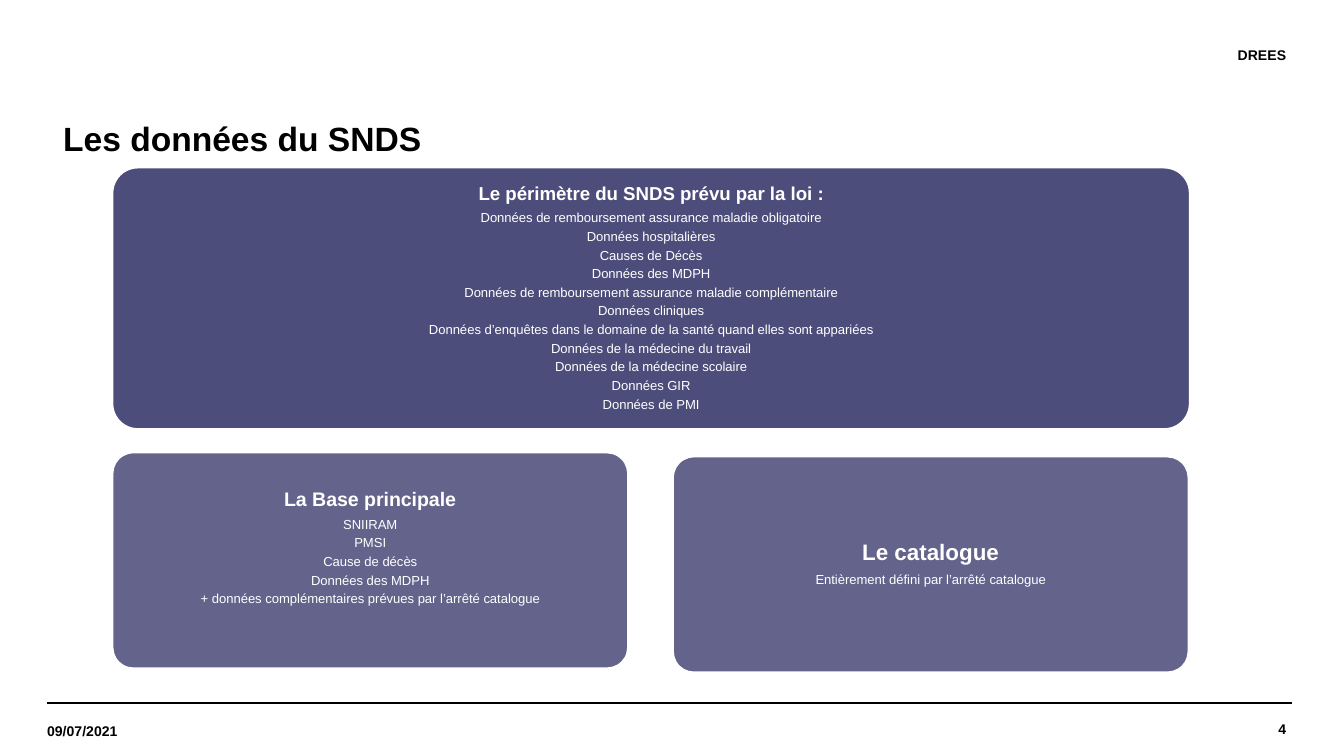
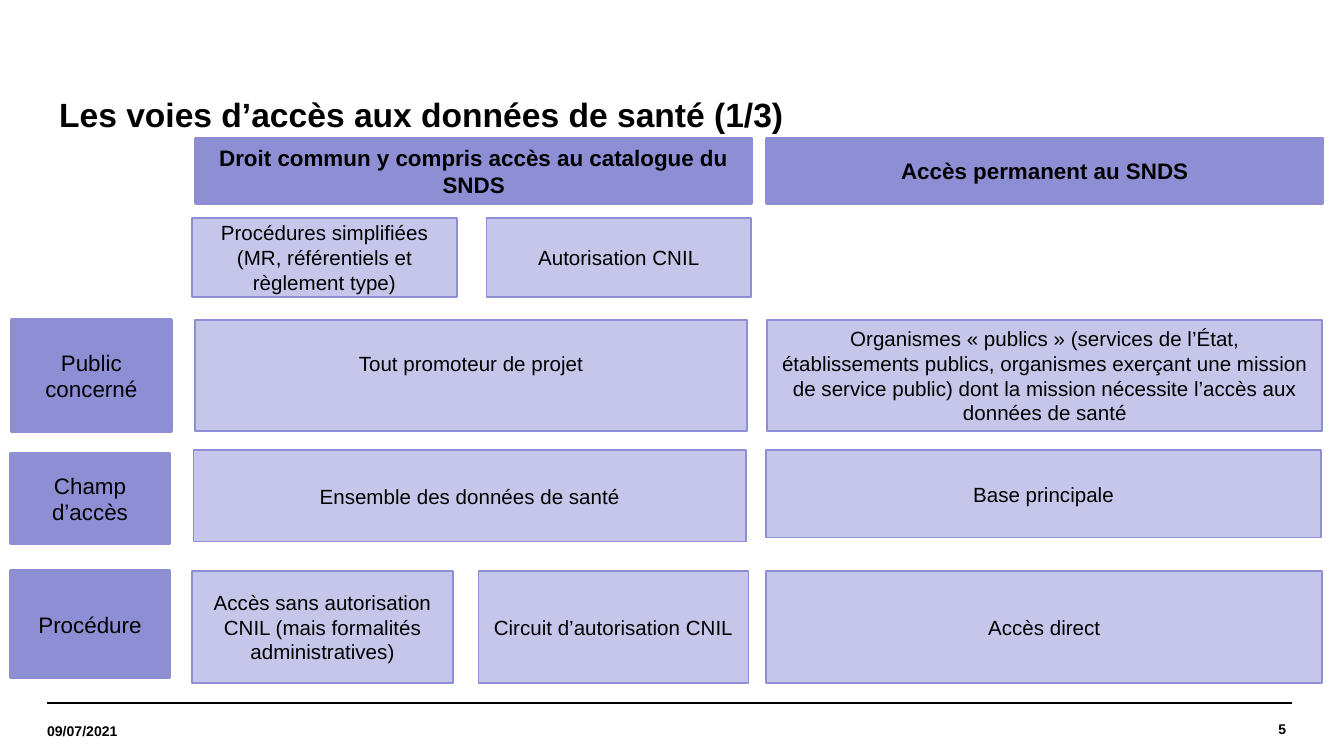
from dataclasses import dataclass

from lxml.etree import SubElement
from pptx import Presentation
from pptx.dml.color import RGBColor as Rgb
from pptx.enum.shapes import MSO_CONNECTOR as Link, MSO_SHAPE as Form
from pptx.enum.text import MSO_ANCHOR as Anchor, MSO_AUTO_SIZE as Fit, PP_ALIGN as Align
from pptx.oxml.ns import qn
from pptx.util import Inches, Pt


@dataclass(frozen=True)
class Theme:
    font: str = "Arial"
    black: str = "000000"
    white: str = "FFFFFF"
    navy: str = "21215A"
    violet: str = "8E8ED5"
    lilac: str = "C6C6EA"
    title: float = 18
    head: float = 12
    cell: float = 11
    item: float = 7
    small: float = 7.5


T = Theme()
DATE = "09/07/2021"


def style(para, size, color=T.black, bold=False, align=Align.CENTER):
    para.alignment = align
    for run in para.runs:
        font = run.font
        font.name, font.size, font.bold = T.font, Pt(size), bold
        font.color.rgb = Rgb.from_string(color)


def inset(frame, left, top, right, bottom):
    frame.margin_left, frame.margin_top = Inches(left), Inches(top)
    frame.margin_right, frame.margin_bottom = Inches(right), Inches(bottom)


def add_form(slide, form, box, fill, edge, width):
    shape = slide.shapes.add_shape(form, *map(Inches, box))
    shape.shadow.inherit = False
    shape.fill.solid()
    shape.fill.fore_color.rgb = Rgb.from_string(fill)
    shape.line.color.rgb = Rgb.from_string(edge)
    shape.line.width = Pt(width)
    frame = shape.text_frame
    frame.word_wrap = True
    frame.vertical_anchor = Anchor.MIDDLE
    return shape


def add_label(slide, box, text, align):
    frame = slide.shapes.add_textbox(*map(Inches, box)).text_frame
    frame.word_wrap = True
    frame.vertical_anchor = Anchor.MIDDLE
    inset(frame, 0, 0, 0, 0)
    frame.text = text
    style(frame.paragraphs[0], T.small, bold=True, align=align)


def add_rule(slide, left):
    rule = slide.shapes.add_connector(
        Link.STRAIGHT, Inches(left), Inches(5.23), Inches(left + 9.22), Inches(5.23))
    rule.line.color.rgb = Rgb.from_string(T.black)
    rule.line.width = Pt(0.8)
    SubElement(rule._element.spPr, qn("a:effectLst"))


def add_slide(prs, title, left, top, number):
    """Title, footer rules, date and page number."""
    slide = prs.slides.add_slide(prs.slide_layouts[5])
    head = slide.shapes.title
    head.left, head.top = Inches(left), Inches(top)
    head.width, head.height = Inches(9.21), Inches(0.59)
    frame = head.text_frame
    frame.text = title
    frame.word_wrap = True
    frame.auto_size = Fit.NONE
    frame.vertical_anchor = Anchor.MIDDLE
    inset(frame, 0.12, 0.05, 0.1, 0.05)
    para = frame.paragraphs[0]
    para.line_spacing = 0.9
    style(para, T.title, bold=True, align=Align.LEFT)

    for start in (0.35, 0.39):
        add_rule(slide, start)
    add_label(slide, (8.09, 5.23, 1.48, 0.39), str(number), Align.RIGHT)
    add_label(slide, (0.35, 5.25, 1.32, 0.38), DATE, Align.LEFT)
    return slide


def add_panel(slide, box, alpha, size, lines, pad=0.05, foot=0.05):
    """Rounded panel: a bold heading, then small centred items."""
    shape = add_form(slide, Form.ROUNDED_RECTANGLE, box, T.navy, T.white, 2)
    shape.adjustments[0] = 0.1
    color = shape._element.spPr.find(qn("a:solidFill"))[0]
    SubElement(color, qn("a:alpha"), val=str(alpha * 1000))
    frame = shape.text_frame
    inset(frame, pad, pad, pad, foot)
    frame.text = "\n".join(lines)
    for i, para in enumerate(frame.paragraphs):
        points = T.item if i else size
        para.line_spacing = 0.9
        para.space_after = Pt(points * 0.35)
        style(para, points, T.white, bold=i == 0)


def add_cell(slide, box, text, foot=0.05):
    shape = add_form(slide, Form.RECTANGLE, box, T.lilac, T.violet, 1)
    shape.text_frame.margin_bottom = Inches(foot)
    shape.text_frame.text = text
    style(shape.text_frame.paragraphs[0], T.cell)


def add_head(slide, box, text, bold=False):
    shape = add_form(slide, Form.RECTANGLE, box, T.violet, T.violet, 2)
    shape.text_frame.text = text
    style(shape.text_frame.paragraphs[0], T.head, bold=bold)


def data_slide(prs):
    slide = add_slide(prs, "Les données du SNDS", 0.35, 0.75, 4)
    add_label(slide, (3.14, 0.21, 6.43, 0.39), "DREES", Align.RIGHT)
    add_panel(slide, (0.83, 1.24, 8.03, 1.96), 80, 10, [
        "Le périmètre du SNDS prévu par la loi :",
        "Données de remboursement assurance maladie obligatoire",
        "Données hospitalières",
        "Causes de Décès",
        "Données des MDPH",
        "Données de remboursement assurance maladie complémentaire",
        "Données cliniques",
        "Données d’enquêtes dans le domaine de la santé quand elles sont appariées",
        "Données de la médecine du travail",
        "Données de la médecine scolaire",
        "Données GIR",
        "Données de PMI",
    ], pad=0.04, foot=0.04)
    add_panel(slide, (0.83, 3.36, 3.85, 1.62), 70, 10.5, [
        "La Base principale",
        "SNIIRAM",
        "PMSI",
        "Cause de décès",
        "Données des MDPH",
        "+ données complémentaires prévues par l’arrêté catalogue",
    ], foot=0.23)
    add_panel(slide, (5, 3.39, 3.85, 1.62), 70, 12, [
        "Le catalogue",
        "Entièrement défini par l’arrêté catalogue",
    ])


def access_slide(prs):
    slide = add_slide(prs, "Les voies d’accès aux données de santé (1/3)", 0.32, 0.57, 5)
    # Column heads
    for left, text in (
        (1.46, "Droit commun y compris accès au catalogue du SNDS"),
        (5.71, "Accès permanent au SNDS"),
    ):
        add_head(slide, (left, 1.03, 4.13, 0.48), text, bold=True)
    # Row heads
    for left, top, high, text in (
        (0.09, 2.38, 0.83, "Public concerné"),
        (0.08, 3.38, 0.66, "Champ d’accès"),
        (0.08, 4.25, 0.79, "Procédure"),
    ):
        add_head(slide, (left, top, 1.18, high), text)
    # Two kinds of common-law access
    for left, text in (
        (1.43, "Procédures simplifiées (MR, référentiels et règlement type)"),
        (3.62, "Autorisation CNIL"),
    ):
        add_cell(slide, (left, 1.62, 1.97, 0.59), text)
    # Public
    add_cell(slide, (1.45, 2.38, 4.11, 0.83), "Tout promoteur de projet", foot=0.23)
    add_cell(slide, (5.71, 2.38, 4.13, 0.83),
             "Organismes « publics » (services de l’État, établissements publics, "
             "organismes exerçant une mission de service public) dont la mission "
             "nécessite l’accès aux données de santé")
    # Scope
    add_cell(slide, (1.44, 3.35, 4.11, 0.68), "Ensemble des données de santé")
    add_cell(slide, (5.7, 3.35, 4.13, 0.65), "Base principale")
    # Procedure
    for left, wide, text in (
        (1.43, 1.94, "Accès sans autorisation CNIL (mais formalités administratives)"),
        (3.56, 2.01, "Circuit d’autorisation CNIL"),
        (5.7, 4.14, "Accès direct"),
    ):
        add_cell(slide, (left, 4.25, wide, 0.83), text)


def main():
    prs = Presentation()
    # Widescreen, 16:9
    prs.slide_width = Inches(10)
    prs.slide_height = prs.slide_width * 9 // 16
    data_slide(prs)
    access_slide(prs)
    prs.save("out.pptx")


if __name__ == "__main__":
    main()
